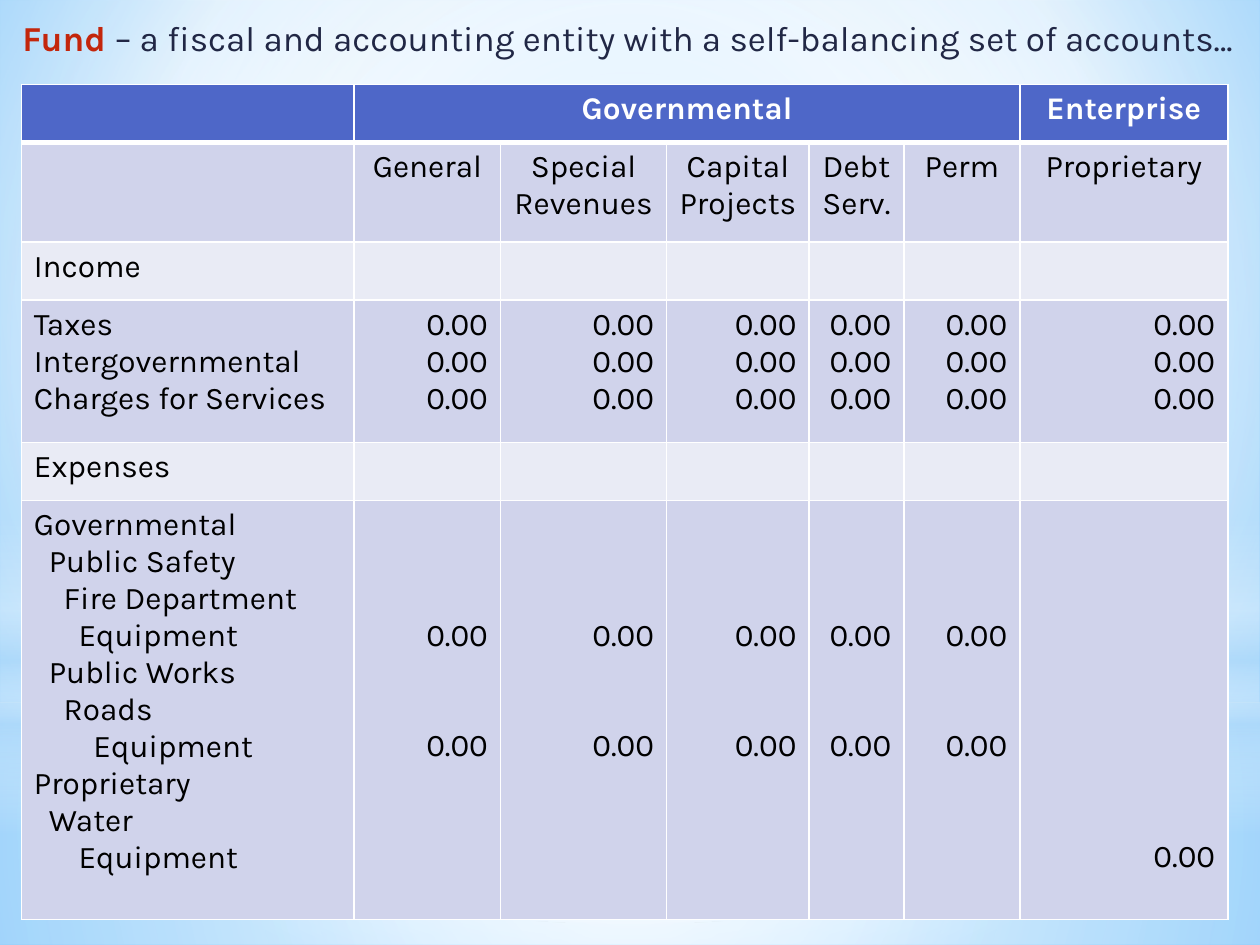
from lxml import etree
from pptx import Presentation
from pptx.dml.color import RGBColor
from pptx.enum.shapes import MSO_SHAPE
from pptx.enum.text import PP_ALIGN
from pptx.oxml.ns import qn
from pptx.util import Cm, Pt

LEFT, CENTER, RIGHT = PP_ALIGN.LEFT, PP_ALIGN.CENTER, PP_ALIGN.RIGHT
RECT, OVAL = MSO_SHAPE.RECTANGLE, MSO_SHAPE.OVAL
FONT = "Karla"
LINE_PT = 21.05  # height of one 18 pt line
C = {"white": "FFFFFF", "black": "000000", "navy": "212745", "red": "C3260C",
     "header": "4E67C8", "band": "D0D3EB", "light": "E9EBF5",
     "sky": "9ED5FF", "deep": "5BB9FF", "pale": "B4DCFA"}


def set_gradient(parent, stops, center=None):
    """Replace the solid fill in parent; center is l, t, r, b in percent, None is vertical."""
    grad = etree.Element(qn("a:gradFill"), rotWithShape="1")
    gs_list = etree.SubElement(grad, qn("a:gsLst"))
    for pos, color, alpha in stops:
        gs = etree.SubElement(gs_list, qn("a:gs"), pos=str(pos * 1000))
        clr = etree.SubElement(gs, qn("a:srgbClr"), val=C[color])
        if alpha < 100:
            etree.SubElement(clr, qn("a:alpha"), val=str(alpha * 1000))
    if center:
        shade = etree.SubElement(grad, qn("a:path"), path="circle")
        etree.SubElement(shade, qn("a:fillToRect"),
                         {side: str(v * 1000) for side, v in zip("ltrb", center)})
    else:
        etree.SubElement(grad, qn("a:lin"), ang="5400000", scaled="0")
    parent.replace(parent.find(qn("a:solidFill")), grad)


def style_run(r, size, color, bold=False):
    r.font.name = FONT
    r.font.size = Pt(size)
    r.font.bold = bold
    r.font.color.rgb = RGBColor.from_string(C[color])


prs = Presentation()
prs.slide_width, prs.slide_height = Cm(25.4), Cm(19.05)
s = prs.slides.add_slide(prs.slide_layouts[6])

# Background and soft glows
s.background.fill.solid()
set_gradient(s._element.find(".//" + qn("p:bgPr")),
             [(0, "sky", 100), (60, "white", 100), (100, "deep", 100)], (20, 10, 20, 60))
MIDDLE = (50, 50, 50, 50)
glows = [
    (RECT, 14.17, 4.88, MIDDLE, [(0, "white", 91), (37, "white", 76), (100, "pale", 79)]),
    (RECT, 0, 14.17, MIDDLE, [(0, "white", 89), (48, "white", 62), (100, "pale", 79)]),
    (RECT, 10.46, 6.35, None, [(0, "white", 0), (29, "white", 30), (45, "pale", 40),
                               (55, "white", 26), (65, "pale", 60), (100, "white", 0)]),
    (OVAL, 4.45, 14.17, MIDDLE, [(0, "white", 100), (56, "white", 0)]),
]
for kind, top, height, center, stops in glows:
    sp = s.shapes.add_shape(kind, 0, Cm(top), prs.slide_width, Cm(height))
    sp.shadow.inherit = False
    sp.line.fill.background()
    sp.fill.solid()
    set_gradient(sp._element.spPr, stops, center)

# Fund table: each cell maps line number to text, so amounts line up with labels
amounts = {0: "0.00", 1: "0.00", 2: "0.00"}
spending = {3: "0.00", 6: "0.00"}
expenses = ["Governmental", "Public Safety", "Fire Department", "Equipment", "Public Works",
            "Roads", "Equipment", "Proprietary", "Water", "Equipment"]
expense_levels = [0, 1, 2, 3, 1, 2, 4, 0, 1, 3]
rows = [
    (1.17, "header", [{}, {0: "Governmental"}, {}, {}, {}, {}, {0: "Enterprise"}]),
    (2.01, "band", [{}, {0: "General"}, {0: "Special", 1: "Revenues"},
                    {0: "Capital", 1: "Projects"}, {0: "Debt", 1: "Serv."},
                    {0: "Perm"}, {0: "Proprietary"}]),
    (1.17, "light", [{0: "Income"}] + [{}] * 6),
    (2.87, "band", [{0: "Taxes", 1: "Intergovernmental", 2: "Charges for Services"}]
     + [amounts] * 6),
    (1.17, "light", [{0: "Expenses"}] + [{}] * 6),
    (8.45, "band", [dict(enumerate(expenses))] + [spending] * 5 + [{9: "0.00"}]),
]
col_widths = [6.71, 2.95, 3.35, 2.87, 1.91, 2.34, 4.19]
table = s.shapes.add_table(len(rows), len(col_widths), Cm(0.43), Cm(1.7),
                           Cm(sum(col_widths)), Cm(sum(row[0] for row in rows))).table
for col, width in zip(table.columns, col_widths):
    col.width = Cm(width)
table.cell(0, 1).merge(table.cell(0, 5))

for i, (height, fill, cells) in enumerate(rows):
    table.rows[i].height = Cm(height)
    for j, lines in enumerate(cells):
        cell = table.cell(i, j)
        tc_pr = cell._tc.get_or_add_tcPr()
        for side in "LRTB":
            thick = (i, side) in [(0, "B"), (1, "T")]
            ln = etree.SubElement(tc_pr, qn("a:ln" + side), w=str(Pt(3 if thick else 1)))
            solid = etree.SubElement(ln, qn("a:solidFill"))
            etree.SubElement(solid, qn("a:srgbClr"), val=C["white"])
        cell.fill.solid()
        cell.fill.fore_color.rgb = RGBColor.from_string(C[fill])
        if not lines:
            continue

        first = min(lines)
        cell.margin_top = Cm(0.13) + Pt(first * LINE_PT)
        tf = cell.text_frame
        tf.text = "\n".join(lines.values())
        previous = first - 1
        for p, line in zip(tf.paragraphs, lines):
            p.alignment = CENTER if i < 2 else RIGHT if j else LEFT
            if line - previous > 1 and line != first:
                p.space_before = Pt((line - previous - 1) * LINE_PT)
            previous = line
            if i == 5 and j == 0:
                p._p.get_or_add_pPr().set("marL", str(Cm(0.3 * expense_levels[line])))
            style_run(p.runs[0], 18, "black" if i else "white", bold=i == 0)

# Title
tf = s.shapes.add_textbox(Cm(0.2), Cm(0.2), Cm(24.97), Cm(1.47)).text_frame
tf.word_wrap = True
tf.margin_right = 0
p = tf.paragraphs[0]
for text, color, bold in [
        ("Fund ", "red", True),
        ("– a fiscal and accounting entity with a self-balancing set of accounts…", "navy", False)]:
    r = p.add_run()
    r.text = text
    style_run(r, 20, color, bold)

prs.save("out.pptx")
